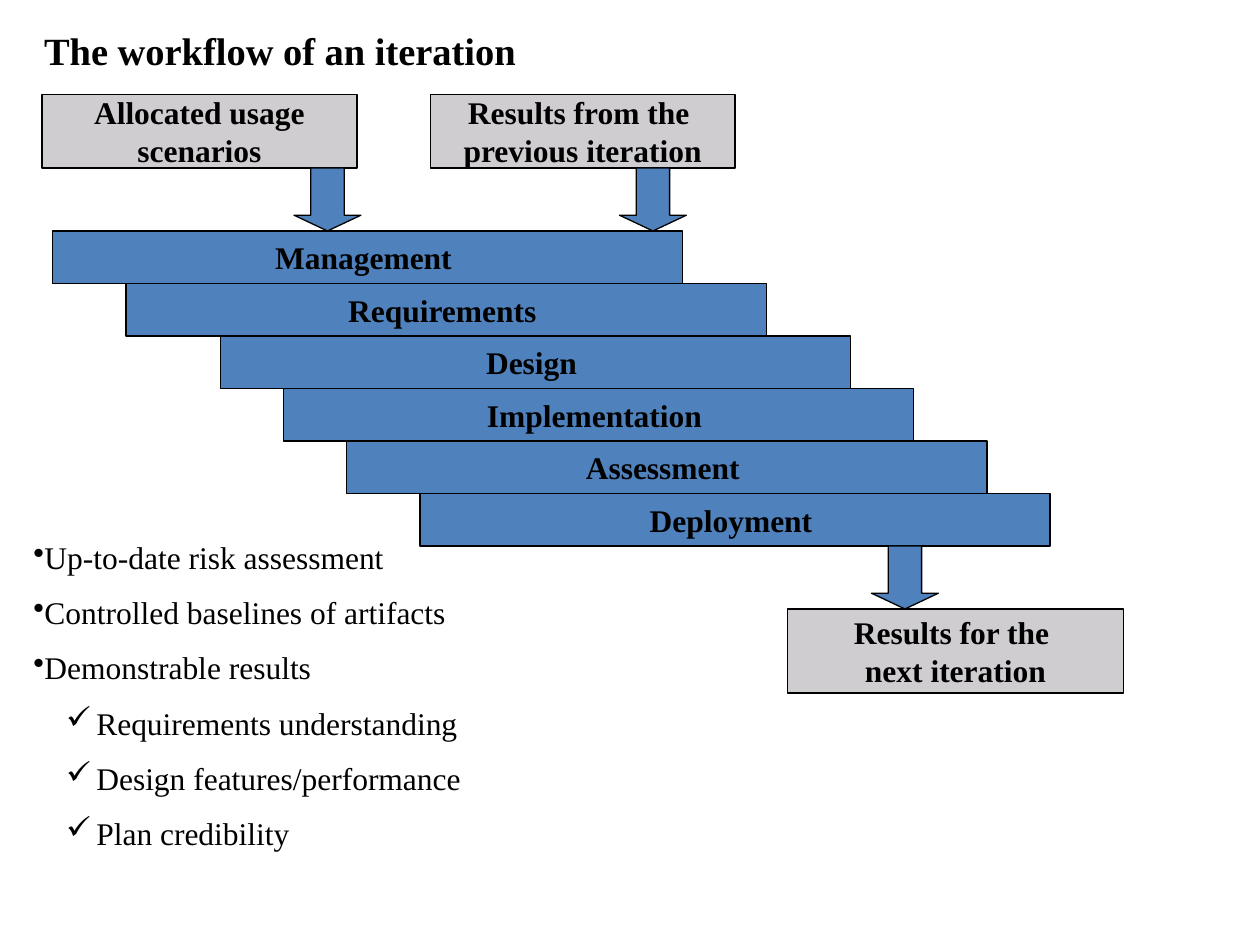
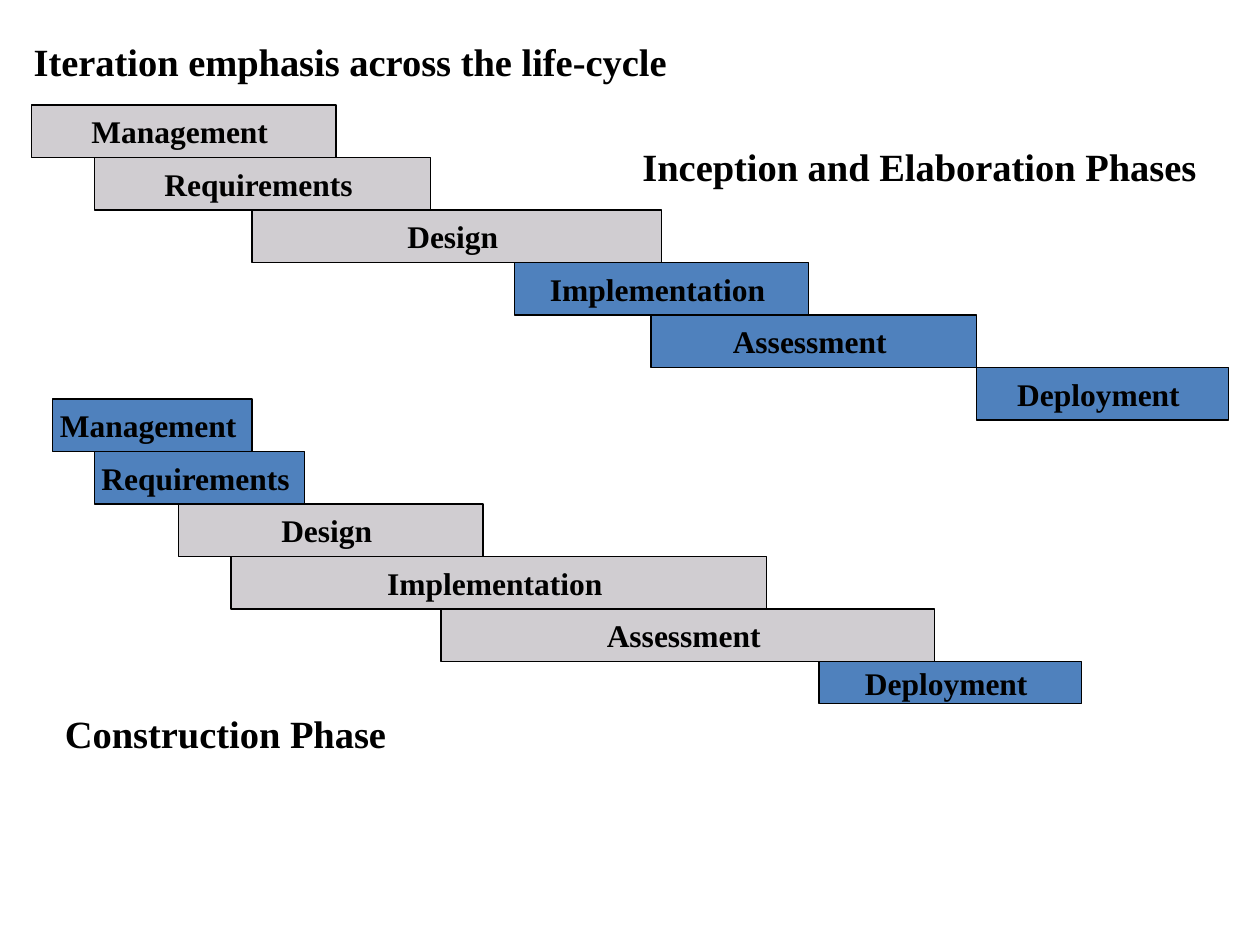
"""Builds two slides on the workflow and emphasis of development iterations."""
from lxml import etree
from pptx import Presentation
from pptx.dml.color import RGBColor
from pptx.enum.shapes import MSO_SHAPE
from pptx.enum.text import MSO_ANCHOR, MSO_AUTO_SIZE, PP_ALIGN
from pptx.oxml.ns import qn
from pptx.util import Emu, Pt

PX = 9525
FONT = "Times New Roman"
COLORS = {"ink": "000000", "blue": "4F81BD", "gray": "D0CDD1"}
RECTANGLE, DOWN_ARROW = MSO_SHAPE.RECTANGLE, MSO_SHAPE.DOWN_ARROW
TOP, MIDDLE = MSO_ANCHOR.TOP, MSO_ANCHOR.MIDDLE
LEFT, CENTER, JUSTIFY = PP_ALIGN.LEFT, PP_ALIGN.CENTER, PP_ALIGN.JUSTIFY
NO_AUTOFIT = MSO_AUTO_SIZE.NONE
TITLE_ONLY = 5
HEADING_SIZE, BODY_SIZE = 22, 18
BAR_HEIGHT = 40
ARROW_WIDTH, ARROW_HEIGHT = 51, 48

WORKFLOWS = ["Management", "Requirements", "Design",
             "Implementation", "Assessment", "Deployment"]
ITERATION_SPANS = [(40, 480), (96, 488), (168, 480),
                   (216, 480), (264, 488), (320, 480)]
ELABORATION_SPANS = [(24, 232), (72, 256), (192, 312),
                     (392, 224), (496, 248), (744, 192)]
CONSTRUCTION_SPANS = [(40, 152), (72, 160), (136, 232),
                      (176, 408), (336, 376), (624, 200)]
OUTCOMES = [
    (0, "Up-to-date risk assessment"),
    (0, "Controlled baselines of artifacts"),
    (0, "Demonstrable results"),
    (1, "Requirements understanding"),
    (1, "Design features/performance"),
    (1, "Plan credibility"),
]
BULLETS = [("•", 0, 0), ("✓", 48, -23)]


def px(*lengths):
    """Turn pixel lengths into EMU."""
    return [Emu(length * PX) for length in lengths]


def color(name):
    """Look up a named colour."""
    return RGBColor.from_string(COLORS[name])


def style_text(frame, size, bold, align):
    """Give every paragraph of a frame the same font and alignment."""
    for para in frame.paragraphs:
        para.alignment = align
        para.font.name = FONT
        para.font.size = Pt(size)
        para.font.bold = bold
        para.font.color.rgb = color("ink")


def add_title_page(deck, text, left, top):
    """Add a title-only slide with its title at the given place."""
    page = deck.slides.add_slide(deck.slide_layouts[TITLE_ONLY])
    title = page.shapes.title
    title.left, title.top, title.width, title.height = px(left, top, 920, 45)
    frame = title.text_frame
    frame.text = text
    frame.auto_size = NO_AUTOFIT
    frame.vertical_anchor = TOP
    style_text(frame, HEADING_SIZE, True, LEFT)
    return page


def add_filled(page, kind, place, fill):
    """Add a filled preset shape with a thin dark outline."""
    shape = page.shapes.add_shape(kind, *px(*place))
    shape.shadow.inherit = False
    shape.fill.solid()
    shape.fill.fore_color.rgb = color(fill)
    shape.line.color.rgb = color("ink")
    shape.line.width = Pt(0.75)
    return shape


def add_box(page, text, place, fill):
    """Add a rectangle with centred bold text."""
    frame = add_filled(page, RECTANGLE, place, fill).text_frame
    frame.text = text
    frame.word_wrap = False
    frame.vertical_anchor = MIDDLE
    style_text(frame, BODY_SIZE, True, CENTER)


def add_arrow(page, left, top):
    """Add a block arrow that points down."""
    arrow = add_filled(page, DOWN_ARROW,
                       (left, top, ARROW_WIDTH, ARROW_HEIGHT), "blue")
    arrow.adjustments[1] = 0.25


def add_staircase(page, top, spans, gray=(), last_height=BAR_HEIGHT):
    """Add one bar per workflow, each a step below the one before."""
    for step, (name, (left, width)) in enumerate(zip(WORKFLOWS, spans)):
        height = last_height if name == WORKFLOWS[-1] else BAR_HEIGHT
        add_box(page, f"{name} ", (left, top + step * BAR_HEIGHT, width, height),
                "gray" if name in gray else "blue")


def add_text(page, text, place, size, bold=False, align=LEFT):
    """Add a wrapping text box and return its frame."""
    frame = page.shapes.add_textbox(*px(*place)).text_frame
    frame.word_wrap = True
    frame.text = text
    style_text(frame, size, bold, align)
    return frame


def add_bullets(page, items, place):
    """Add a two-level bulleted list."""
    frame = add_text(page, "\n".join(text for _, text in items), place,
                     BODY_SIZE, align=JUSTIFY)
    for para, (level, _) in zip(frame.paragraphs, items):
        mark, margin, indent = BULLETS[level]
        para.level = level
        para.space_after = Pt(10)
        properties = para._p.get_or_add_pPr()
        properties.set("marL", str(margin * PX))
        properties.set("indent", str(indent * PX))
        bullet = etree.Element(qn("a:buChar"), char=mark)
        properties.find(qn("a:spcAft")).addnext(bullet)


def build_workflow(deck):
    """Build the slide on the workflow of one iteration."""
    page = add_title_page(deck, "The workflow of an iteration", 24, 16)
    add_box(page, "Allocated usage\nscenarios", (32, 72, 240, 56), "gray")
    add_box(page, "Results from the \nprevious iteration",
            (328, 72, 232, 56), "gray")
    add_staircase(page, 176, ITERATION_SPANS)
    add_box(page, "Results for the \nnext iteration",
            (600, 464, 256, 64), "gray")
    for left, top in [(224, 128), (472, 128), (664, 416)]:
        add_arrow(page, left, top)
    add_bullets(page, OUTCOMES, (16, 405, 376, 257))


def build_emphasis(deck):
    """Build the slide on the emphasis in each phase."""
    page = add_title_page(deck, "Iteration emphasis across the life-cycle", 16, 24)
    add_staircase(page, 80, ELABORATION_SPANS, gray=WORKFLOWS[:3])
    add_text(page, "Inception and Elaboration Phases",
             (480, 104, 456, 45), HEADING_SIZE, bold=True)
    add_staircase(page, 304, CONSTRUCTION_SPANS, gray=WORKFLOWS[2:5],
                  last_height=32)
    add_text(page, "Construction Phase",
             (40, 536, 360, 45), HEADING_SIZE, bold=True)


def main():
    """Build and save the deck."""
    deck = Presentation()
    deck.slide_width, deck.slide_height = px(960, 720)
    build_workflow(deck)
    build_emphasis(deck)
    deck.save("out.pptx")


if __name__ == "__main__":
    main()
